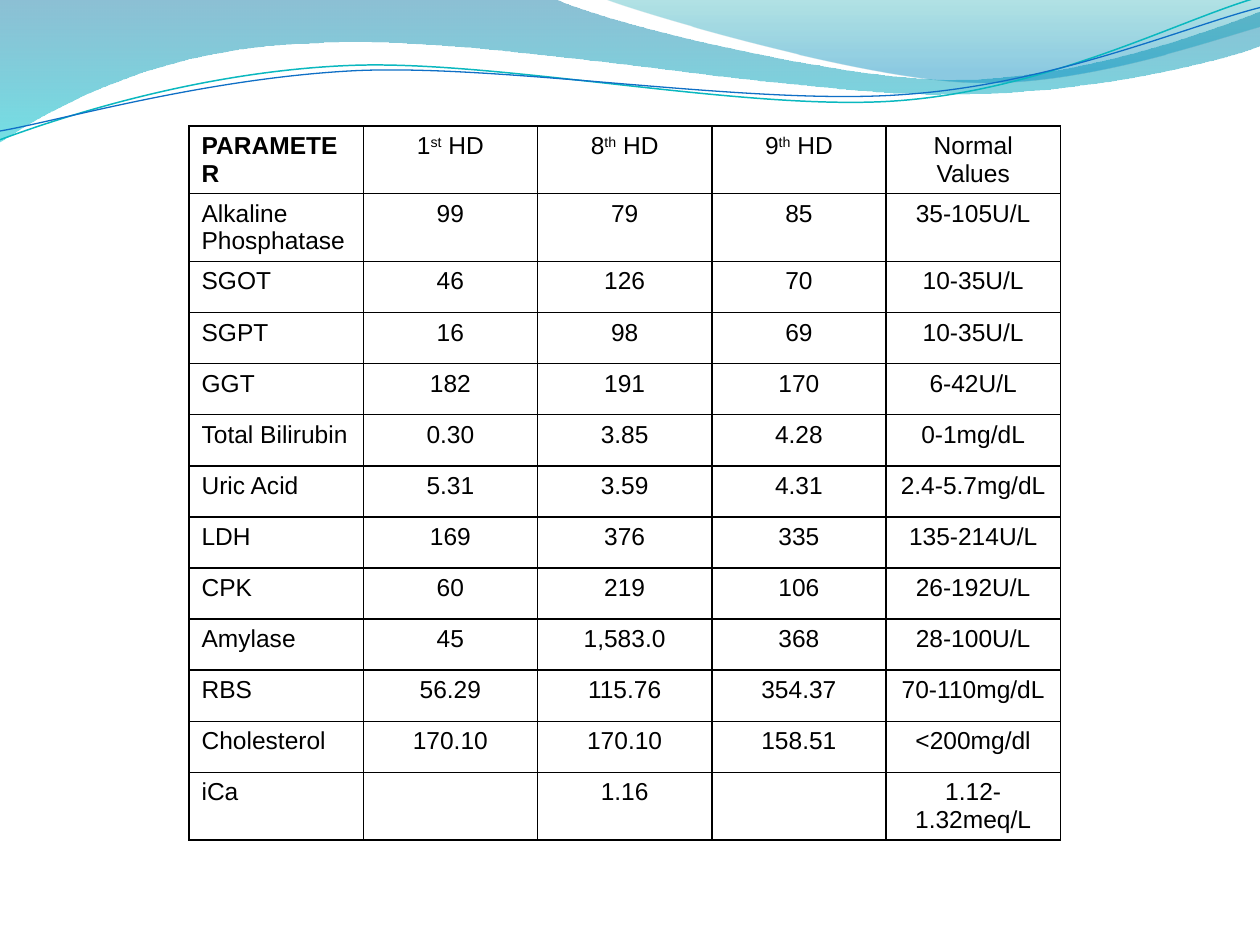
from lxml import etree
from pptx import Presentation
from pptx.dml.color import RGBColor
from pptx.enum.text import PP_ALIGN
from pptx.oxml.ns import qn
from pptx.util import Pt

CENTER, LEFT = PP_ALIGN.CENTER, PP_ALIGN.LEFT
BLANK_LAYOUT = 6

BAND = [(0, 0), (316.8, -0.7),
        (342.7, 12.2, 478.1, 45.4, 545.8, 45.4),
        (614.2, 45.4, 689.8, 18.7, 720, 6.5), (720.7, 25.9),
        (707.8, 31.7, 626.4, 54.7, 537.1, 54),
        (447.8, 54, 275, 20.2, 185, 24.5),
        (92.9, 25.9, 33.1, 59.8, -0.7, 81.4), (0, 0)]
CREST = [(344.9, -0.7),
         (366.5, 7.9, 491, 44.6, 553.7, 46.8),
         (616.3, 49.7, 691.9, 23, 720, 15.1), (720, 0), (344.9, -0.7)]
TEAL_LINE = [(-1.4, 62.9),
             (33.8, 51.7, 114.1, 29.4, 199.8, 29.9),
             (284.8, 30.3, 425.9, 67.3, 512.5, 64.8),
             (599.1, 62.4, 676.5, 25.7, 720.2, 15.6)]
BLUE_LINE = [(-1.1, 57.9),
             (32.9, 53.7, 118.3, 33.2, 204.1, 33),
             (290.5, 33.4, 428.9, 63.8, 515.5, 61.4),
             (601.4, 59.6, 678.4, 30.1, 721.4, 21.3)]
LINE_TILT = 357.3

LAB_RESULTS = [
    ("PARAMETER", "1^st^ HD", "8^th^ HD", "9^th^ HD", "Normal Values"),
    ("Alkaline Phosphatase", "99", "79", "85", "35-105U/L"),
    ("SGOT", "46", "126", "70", "10-35U/L"),
    ("SGPT", "16", "98", "69", "10-35U/L"),
    ("GGT", "182", "191", "170", "6-42U/L"),
    ("Total Bilirubin", "0.30", "3.85", "4.28", "0-1mg/dL"),
    ("Uric Acid", "5.31", "3.59", "4.31", "2.4-5.7mg/dL"),
    ("LDH", "169", "376", "335", "135-214U/L"),
    ("CPK", "60", "219", "106", "26-192U/L"),
    ("Amylase", "45", "1,583.0", "368", "28-100U/L"),
    ("RBS", "56.29", "115.76", "354.37", "70-110mg/dL"),
    ("Cholesterol", "170.10", "170.10", "158.51", "<200mg/dl"),
    ("iCa", "", "1.16", "", "1.12-1.32meq/L"),
]


def color(value):
    return RGBColor.from_string(value)


class SlidePainter:
    """Holds the text style and the current slide, and draws its elements."""

    font_name = "Arial"
    font_size = 14
    ink = "000000"
    border_width = 1

    def __init__(self, page):
        self.page = page

    def outline(self, segments, close):
        start, *others = [[(Pt(x), Pt(y)) for x, y in zip(segment[::2], segment[1::2])]
                          for segment in segments]
        builder = self.page.shapes.build_freeform(*start[0], scale=1.0)
        for points in others:
            builder.add_line_segments(points, close=False)
        if close:
            builder.add_line_segments([], close=True)
        shape = builder.convert_to_shape()
        shape.shadow.inherit = False
        steps = shape._element.spPr.iter(qn("a:lnTo"))
        self.bend(list(steps), [len(points) for points in others])
        return shape

    def bend(self, steps, counts):
        for count in counts:
            first, *rest = steps[:count]
            steps = steps[count:]
            if rest:
                first.tag = qn("a:cubicBezTo")
                for step in rest:
                    first.append(step[0])
                    step.getparent().remove(step)

    def wave(self, segments, stops):
        shape = self.outline(segments, close=True)
        shape.line.fill.background()
        shape.fill.gradient()
        shape.fill.gradient_angle = 270
        for stop, (position, value, _) in zip(shape.fill.gradient_stops, stops):
            stop.position = position
            stop.color.rgb = color(value)
        for node, (_, _, opacity) in zip(shape._element.spPr.iter(qn("a:srgbClr")), stops):
            etree.SubElement(node, qn("a:alpha"), val=str(opacity * 1000))

    def curve(self, segments, value, width):
        shape = self.outline(segments, close=False)
        shape.rotation = LINE_TILT
        shape.fill.background()
        shape.line.color.rgb = color(value)
        shape.line.width = Pt(width)
        return shape

    def group(self, *shapes):
        self.page.shapes.add_group_shape(shapes)

    def table(self, rows, left, top, column_width, row_height):
        columns = len(rows[0])
        frame = self.page.shapes.add_table(len(rows), columns, Pt(left), Pt(top),
                                           Pt(column_width * columns), Pt(row_height * len(rows)))
        table = frame.table
        table.first_row = table.horz_banding = False
        for column in table.columns:
            column.width = Pt(column_width)
        for row_index, row in enumerate(rows):
            table.rows[row_index].height = Pt(row_height)
            for column_index, text in enumerate(row):
                self.cell(table.cell(row_index, column_index), text,
                          CENTER if column_index else LEFT,
                          bold=row_index == column_index == 0)

    def cell(self, cell, text, alignment, bold):
        self.borders(cell)
        cell.fill.background()
        para = cell.text_frame.paragraphs[0]
        para.alignment = alignment
        para.font.name = self.font_name
        para.font.size = Pt(self.font_size)
        para.font.bold = bold
        para.font.color.rgb = color(self.ink)
        for index, part in enumerate(text.split("^") if text else []):
            span = para.add_run()
            span.text = part
            if index % 2:
                span._r.get_or_add_rPr().set("baseline", "30000")

    def borders(self, cell):
        properties = cell._tc.get_or_add_tcPr()
        for side in ("a:lnL", "a:lnR", "a:lnT", "a:lnB"):
            line = etree.SubElement(properties, qn(side), w=str(Pt(self.border_width)))
            fill = etree.SubElement(line, qn("a:solidFill"))
            etree.SubElement(fill, qn("a:srgbClr"), val=self.ink)


def main():
    deck = Presentation()
    deck.slide_width, deck.slide_height = Pt(720), Pt(540)
    painter = SlidePainter(deck.slides.add_slide(deck.slide_layouts[BLANK_LAYOUT]))
    painter.wave(BAND, [(0, "0074A1", 45), (1, "00C6CF", 55)])
    painter.wave(CREST, [(0, "00A1A9", 30), (0.8, "008BBF", 45)])
    painter.group(painter.curve(TEAL_LINE, "0AB8BF", 0.85),
                  painter.curve(BLUE_LINE, "0F6FC6", 0.75))
    painter.table(LAB_RESULTS, left=108, top=72, column_width=99.6, row_height=29.2)
    deck.save("out.pptx")


if __name__ == "__main__":
    main()
